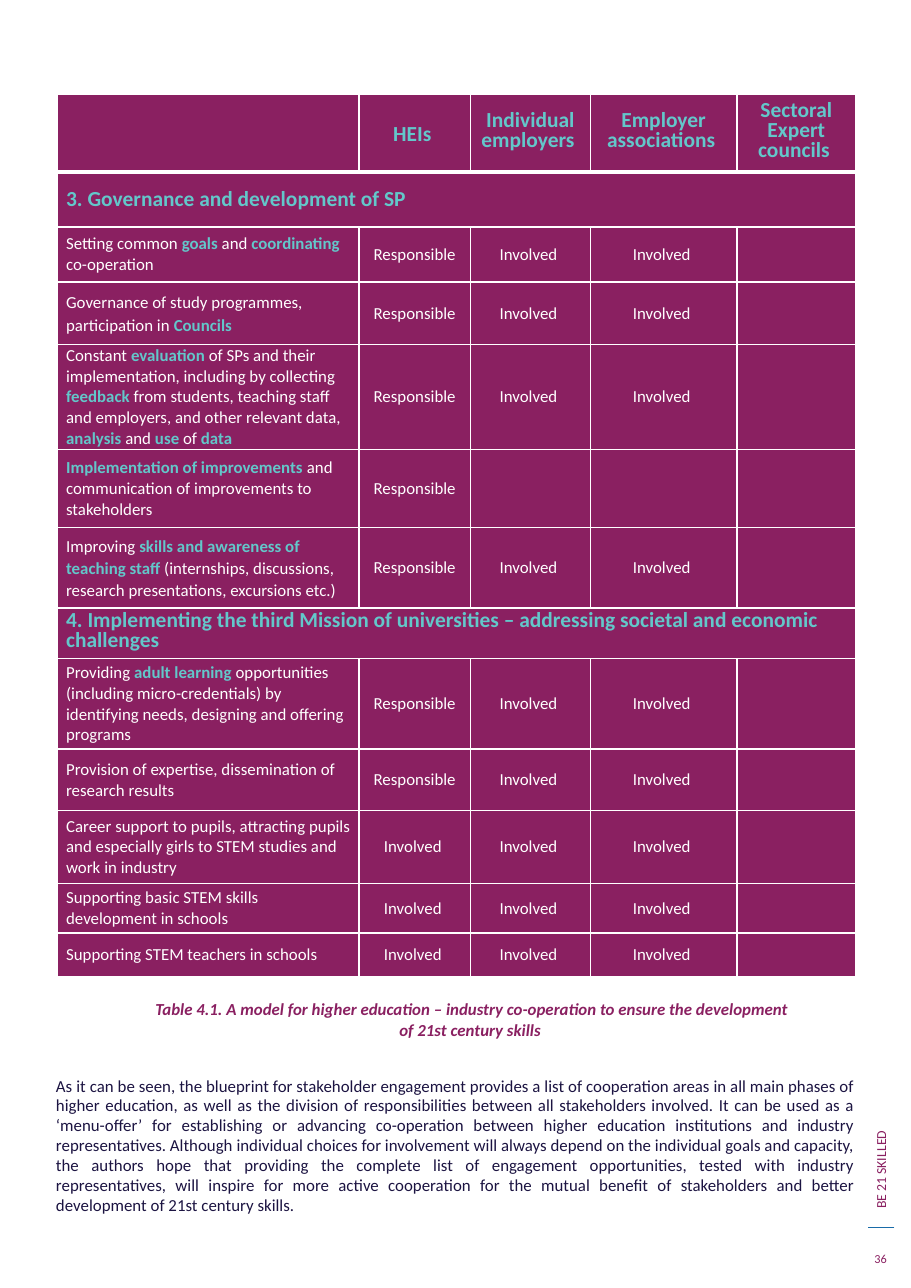
import dataclasses

import lxml.etree
import pptx
import pptx.dml.color
import pptx.enum.shapes
import pptx.enum.text
import pptx.oxml.ns
import pptx.util

Inches = pptx.util.Inches
Pt = pptx.util.Pt
Align = pptx.enum.text.PP_ALIGN
Anchor = pptx.enum.text.MSO_ANCHOR
qn = pptx.oxml.ns.qn


@dataclasses.dataclass(frozen=True)
class Theme:
    font: str = "Calibri"
    plum: str = "8A2061"
    aqua: str = "63C7CA"
    white: str = "FFFFFF"
    navy: str = "1C1442"
    rule: str = "186BA8"
    heading: int = 14
    body: int = 11
    label: int = 9
    number: int = 8


THEME = Theme()
HEADING_LEADING = Pt(12.8)
COLUMN_WIDTHS = [2.74, 1.01, 1.09, 1.33, 1.08]
HEADER_HEIGHT = 0.7
HEADERS = [
    [],
    ["HEIs "],
    ["Individual", "employers "],
    ["Employer", "associations "],
    ["Sectoral", "Expert", "councils "],
]
HEI_LEADS = ["Responsible", "Involved ", "Involved ", ""]
HEI_ALONE = ["Responsible", "", "", ""]
ALL_INVOLVED = ["Involved ", "Involved ", "Involved ", ""]

# Emphasised words stand between asterisks.
ROWS = [
    (0.5, "3. Governance and development of SP ", 1, None),
    (0.5, "Setting common *goals* and *coordinating* co-operation", 1, HEI_LEADS),
    (0.57, "Governance of study programmes, participation in *Councils*", 1.07, HEI_LEADS),
    (0.95, "Constant *evaluation* of SPs and their implementation, including by "
           "collecting *feedback *from students, teaching staff and employers, and other "
           "relevant data, *analysis* and *use* of *data*", 1, HEI_LEADS),
    (0.71, "*Implementation of improvements *and communication of improvements to "
           "stakeholders", 1, HEI_ALONE),
    (0.73, "Improving *skills and awareness of teaching staff *(internships, discussions, "
           "research presentations, excursions etc.)", 1.07, HEI_LEADS),
    (0.46, "4. Implementing the third Mission of universities – addressing societal and "
           "economic challenges", HEADING_LEADING, None),
    (0.82, "Providing *adult learning *opportunities (including micro-credentials) by "
           "identifying needs, designing and offering programs", 1, HEI_LEADS),
    (0.56, "Provision of expertise, dissemination of research results", 1, HEI_LEADS),
    (0.66, "Career support to pupils, attracting pupils and especially girls to STEM "
           "studies and work in industry", 1, ALL_INVOLVED),
    (0.45, "Supporting basic STEM skills development in schools", 1, ALL_INVOLVED),
    (0.4, "Supporting STEM teachers in schools", 1, ALL_INVOLVED),
]
CAPTION = ("Table 4.1. A model for higher education – industry co-operation to ensure "
           "the development of 21st century skills ")
CONCLUSION = (
    "As it can be seen, the blueprint for stakeholder engagement provides a list of "
    "cooperation areas in all main phases of higher education, as well as the division of "
    "responsibilities between all stakeholders involved. It can be used as a ‘menu-offer’ "
    "for establishing or advancing co-operation between higher education institutions and "
    "industry representatives. Although individual choices for involvement will always "
    "depend on the individual goals and capacity, the authors hope that providing the "
    "complete list of engagement opportunities, tested with industry representatives, will "
    "inspire for more active cooperation for the mutual benefit of stakeholders and better "
    "development of 21st century skills. "
)


def color(value):
    return pptx.dml.color.RGBColor.from_string(value)


def add_span(para, text, size, ink, bold=False, italic=False):
    span = para.add_run()
    span.text = text
    span.font.name = THEME.font
    span.font.size = Pt(size)
    span.font.color.rgb = color(ink)
    span.font.bold = bold
    span.font.italic = italic


def add_text(page, place, text, size, ink, align=Align.LEFT, spacing=1, bold=False, italic=False):
    box = page.shapes.add_textbox(*(Inches(value) for value in place))
    box.text_frame.word_wrap = True
    para = box.text_frame.paragraphs[0]
    para.alignment = align
    para.line_spacing = spacing
    add_span(para, text, size, ink, bold, italic)
    return box


def add_border(cell, side, width):
    line = lxml.etree.SubElement(cell._tc.get_or_add_tcPr(), qn("a:" + side), w=str(Pt(width)))
    fill = lxml.etree.SubElement(line, qn("a:solidFill"))
    lxml.etree.SubElement(fill, qn("a:srgbClr"), val=THEME.white)


def style_cell(cell, top, bottom):
    for side, width in (("lnL", 1), ("lnR", 1), ("lnT", top), ("lnB", bottom)):
        add_border(cell, side, width)
    cell.fill.solid()
    cell.fill.fore_color.rgb = color(THEME.plum)
    cell.vertical_anchor = Anchor.MIDDLE
    cell.margin_left = cell.margin_right = Inches(0.07)
    cell.margin_top = cell.margin_bottom = 0


def fill_header(cell, lines):
    for index, text in enumerate(lines):
        para = cell.text_frame.add_paragraph() if index else cell.text_frame.paragraphs[0]
        para.alignment = Align.CENTER
        para.line_spacing = HEADING_LEADING if len(lines) > 1 else 1.07
        add_span(para, text, THEME.heading, THEME.aqua, bold=True)


def fill_section(cell, text, spacing):
    cell.margin_left = Inches(0.08)
    para = cell.text_frame.paragraphs[0]
    para.line_spacing = spacing
    add_span(para, text, THEME.heading, THEME.aqua, bold=True)


def fill_task(cell, text, spacing):
    cell.margin_left = Inches(0.08)
    para = cell.text_frame.paragraphs[0]
    para.line_spacing = spacing
    for index, part in enumerate(text.split("*")):
        strong = index % 2 == 1
        if part:
            add_span(para, part, THEME.body, THEME.aqua if strong else THEME.white, strong)


def fill_role(cell, role):
    para = cell.text_frame.paragraphs[0]
    para.alignment = Align.CENTER
    if role:
        add_span(para, role, THEME.body, THEME.white)


def add_roles_table(page):
    heights = [HEADER_HEIGHT] + [row[0] for row in ROWS]
    table = page.shapes.add_table(
        len(heights), len(COLUMN_WIDTHS), Inches(0.52), Inches(0.86),
        Inches(sum(COLUMN_WIDTHS)), Inches(sum(heights))).table
    table.first_row = table.horz_banding = False
    for column, width in zip(table.columns, COLUMN_WIDTHS):
        column.width = Inches(width)
    for index, height in enumerate(heights):
        table.rows[index].height = Inches(height)
        for cell in table.rows[index].cells:
            style_cell(cell, 3 if index == 1 else 1, 3 if index == 0 else 1)
    for cell, lines in zip(table.rows[0].cells, HEADERS):
        fill_header(cell, lines)
    for index, (_, text, spacing, roles) in enumerate(ROWS, 1):
        first = table.cell(index, 0)
        if roles is None:
            first.merge(table.cell(index, len(COLUMN_WIDTHS) - 1))
            fill_section(first, text, spacing)
            continue
        fill_task(first, text, spacing)
        for column, role in enumerate(roles, 1):
            fill_role(table.cell(index, column), role)


def add_footer(page):
    label = add_text(page, (6.26, 9.21, 3.47, 0.25), "BE 21 SKILLED", THEME.label, THEME.plum)
    label.rotation = 270
    rule = page.shapes.add_connector(
        pptx.enum.shapes.MSO_CONNECTOR.STRAIGHT,
        Inches(8.12), Inches(11.14), Inches(7.88), Inches(11.14))
    rule.line.color.rgb = color(THEME.rule)
    rule.line.width = Pt(0.75)
    lxml.etree.SubElement(rule._element.spPr, qn("a:effectLst"))
    number = add_text(page, (7.8, 11.28, 0.39, 0.29), "36", THEME.number, THEME.plum, Align.CENTER)
    number.text_frame.vertical_anchor = Anchor.MIDDLE


def main():
    deck = pptx.Presentation()
    deck.slide_width, deck.slide_height = Inches(8.27), Inches(11.69)
    page = deck.slides.add_slide(deck.slide_layouts[6])
    add_footer(page)
    caption = add_text(page, (1.01, 9, 6.25, 0.48), CAPTION, THEME.body, THEME.plum,
                       Align.CENTER, 1.07, bold=True, italic=True)
    caption.text_frame.margin_left = Inches(0.4)
    add_roles_table(page)
    add_text(page, (0.41, 9.72, 7.45, 1.4), CONCLUSION, THEME.body, THEME.navy,
             Align.JUSTIFY, 0.98)
    deck.save("out.pptx")


if __name__ == "__main__":
    main()
